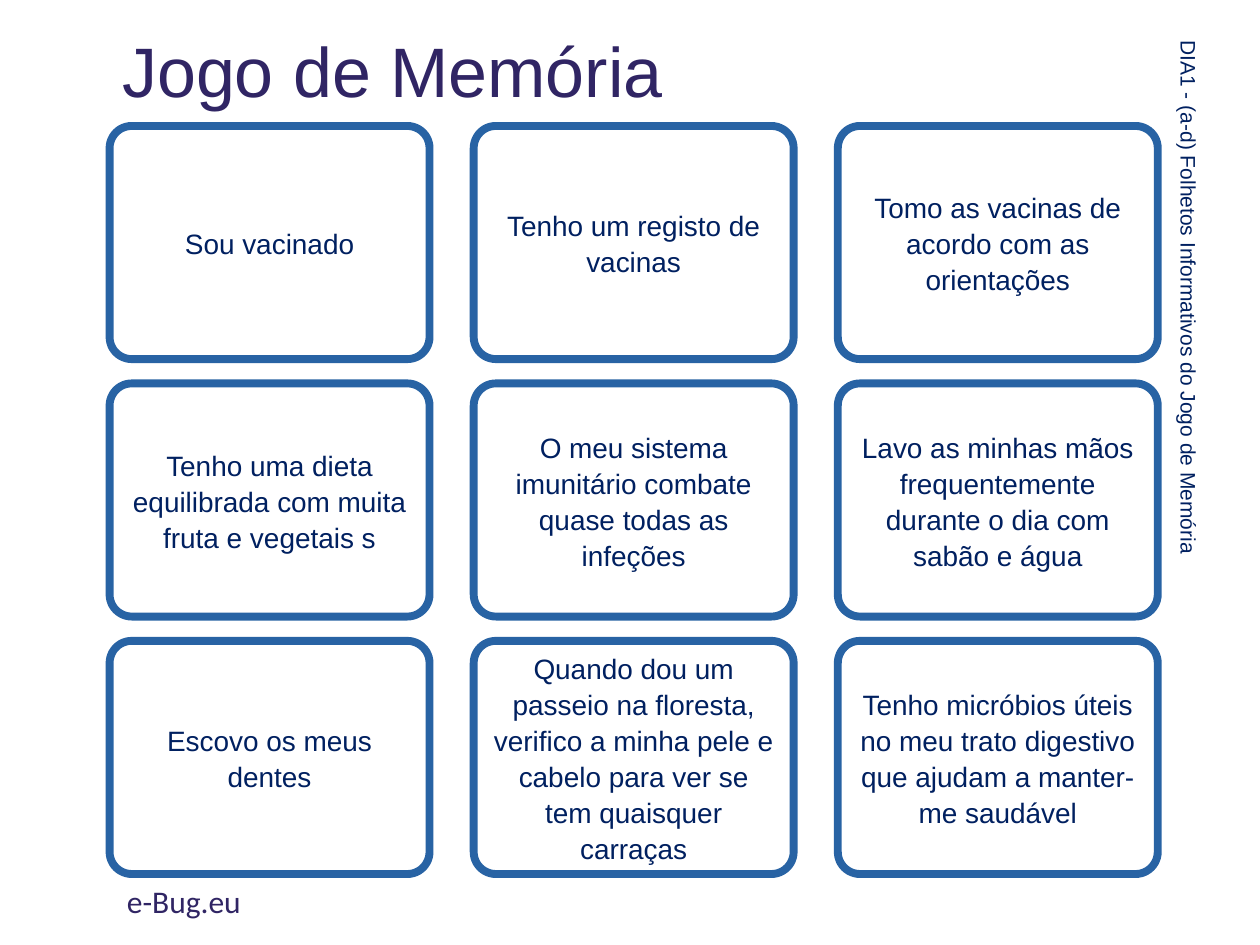
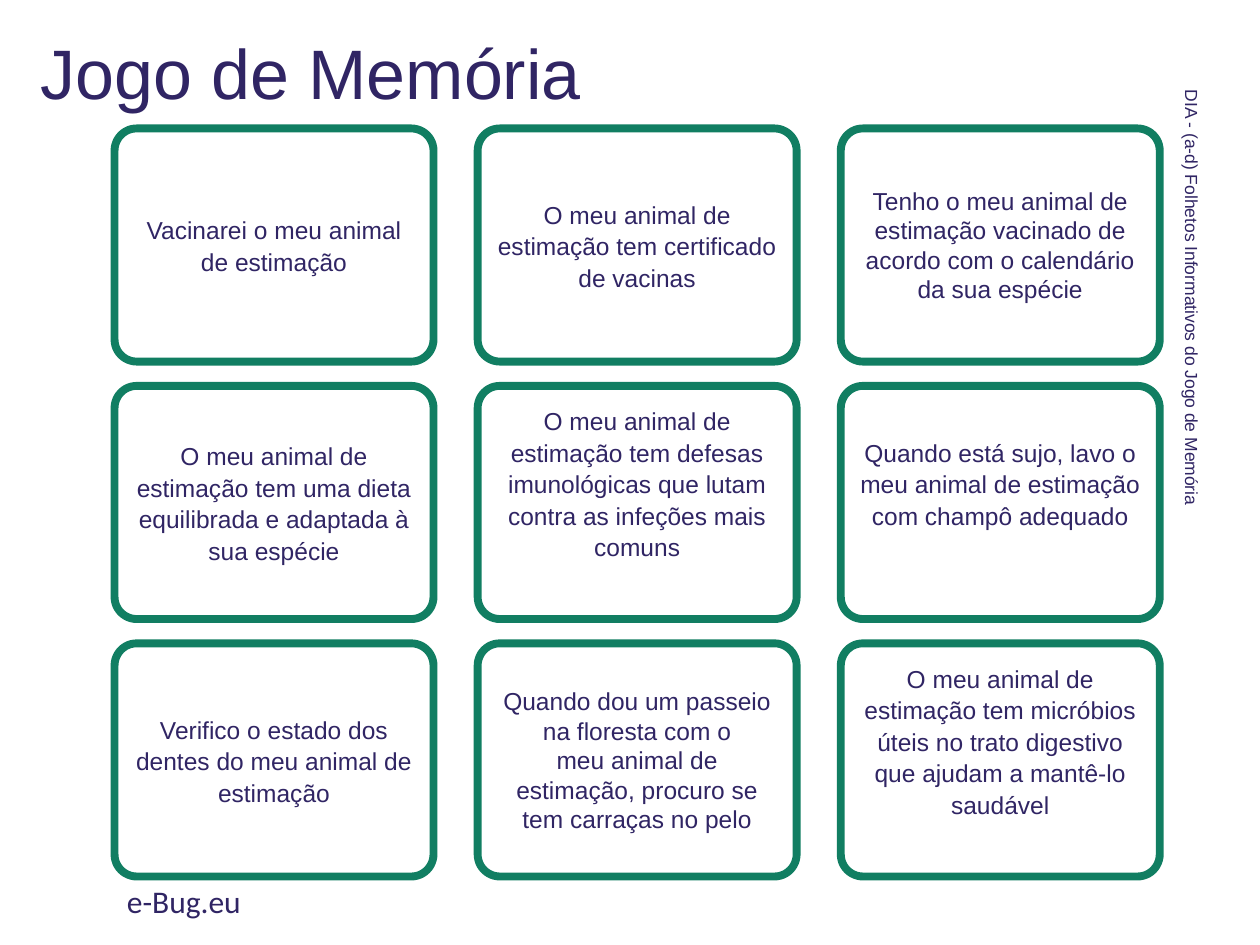
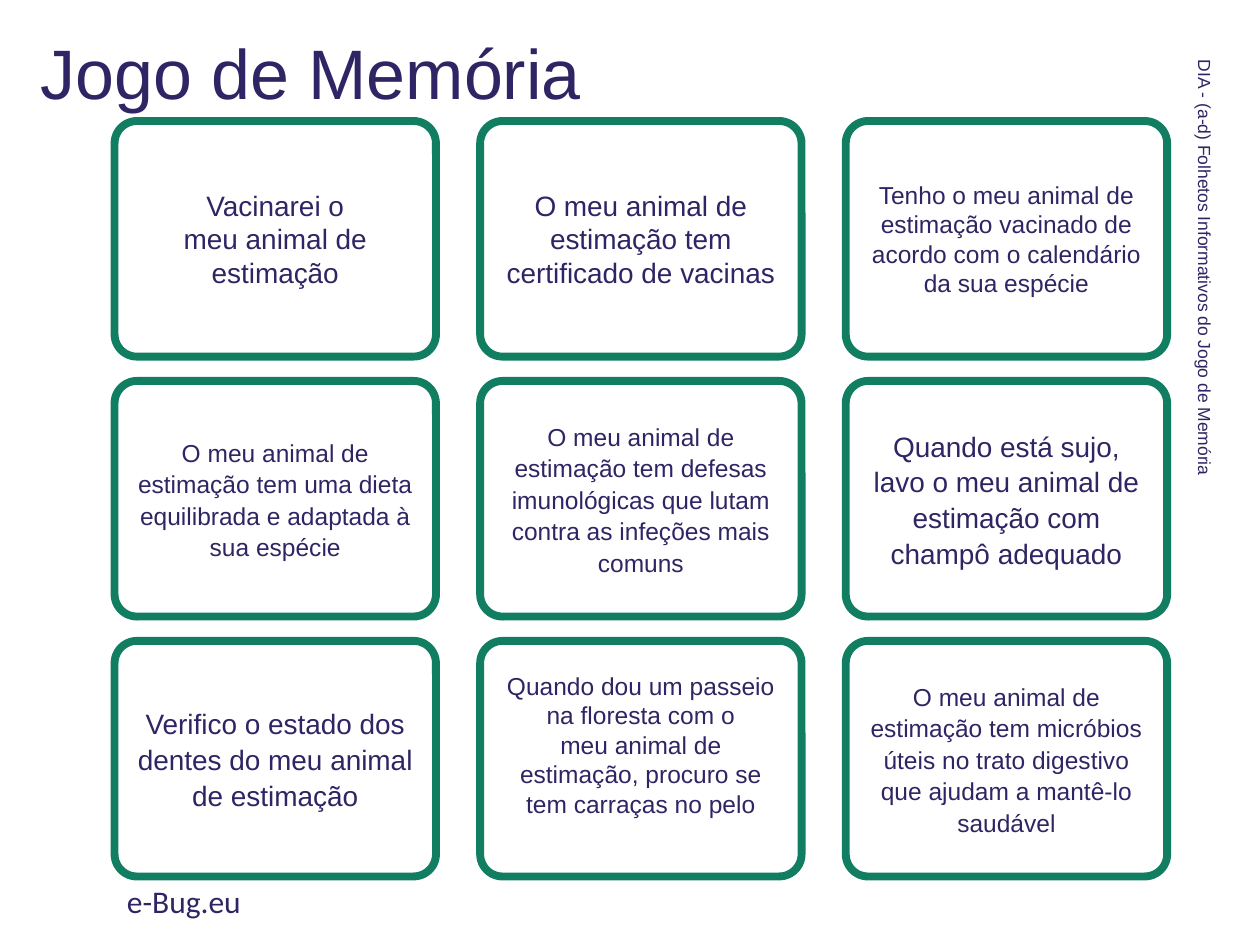
from collections import namedtuple

from pptx import Presentation
from pptx.dml.color import RGBColor
from pptx.enum.shapes import MSO_SHAPE
from pptx.enum.text import MSO_ANCHOR, MSO_AUTO_SIZE, PP_ALIGN
from pptx.util import Cm, Pt

COLORS = {"purple": "302564", "navy": "002060", "blue": "2863A4", "green": "117E62"}
TITLE_ONLY = 5
COLUMNS = 3
GAP_X, GAP_Y = 0.89, 0.49
INSET = 0.13
LIFT_LINE, LIFT_LOOSE_LINE = 0.57, 0.78

# lift is extra room under the text, in cm; tight means single line spacing
Card = namedtuple("Card", "text size tight lift", defaults=(14, False, 0))

PERSON_CARDS = [
    Card(text, 16) for text in (
        "Sou vacinado",
        "Tenho um registo de vacinas",
        "Tomo as vacinas de acordo com as orientações",
        "Tenho uma dieta equilibrada com muita fruta e vegetais s",
        "O meu sistema imunitário combate quase todas as infeções",
        "Lavo as minhas mãos frequentemente durante o dia com sabão e água",
        "Escovo os meus dentes",
        "Quando dou um passeio na floresta, verifico a minha pele e cabelo "
        "para ver se tem quaisquer carraças",
        "Tenho micróbios úteis no meu trato digestivo que ajudam a manter-me saudável",
    )
]

CALENDAR = "Tenho o meu animal de estimação vacinado de acordo com o calendário da sua espécie"
DIET = "O meu animal de estimação tem uma dieta equilibrada e adaptada à sua espécie"
DEFENCES = ("O meu animal de estimação tem defesas imunológicas que lutam "
            "contra as infeções mais comuns")
WASHING = "Quando está sujo, lavo o meu animal de estimação com champô adequado"
TEETH = "Verifico o estado dos dentes do meu animal de estimação"
FOREST = ("Quando dou um passeio\nna floresta com o\n"
          "meu animal de estimação, procuro se tem carraças no pelo")
MICROBES = ("O meu animal de estimação tem micróbios úteis no trato digestivo "
            "que ajudam a mantê-lo saudável")

PET_CARDS = [
    Card("Vacinarei o meu animal de estimação"),
    Card("O meu animal de estimação tem certificado de vacinas"),
    Card(CALENDAR, tight=True),
    Card(DIET),
    Card(DEFENCES, lift=LIFT_LOOSE_LINE),
    Card(WASHING, lift=LIFT_LOOSE_LINE),
    Card(TEETH),
    Card(FOREST, tight=True),
    Card(MICROBES, lift=LIFT_LOOSE_LINE),
]

PET_CARDS_LARGE = [
    Card("Vacinarei o\nmeu animal de estimação", 16, tight=True),
    Card("O meu animal de estimação tem\ncertificado de vacinas", 16, tight=True),
    Card(CALENDAR, tight=True),
    Card(DIET),
    Card(DEFENCES),
    Card(WASHING, 16),
    Card(TEETH, 16),
    Card(FOREST, tight=True, lift=LIFT_LINE),
    Card(MICROBES),
]

PET_SIDE_NOTE = "DIA - (a-d) Folhetos Informativos do Jogo de Memória"

# Boxes are left, top, width, height in cm; "first_card" sets the whole grid
GAMES = [
    dict(cards=PERSON_CARDS, outline="blue", ink="navy",
         title=(2.21, 0.33, 22.86, 2.34), first_card=(2.21, 2.54, 6.45, 4.7),
         note="DIA1 - (a-d) Folhetos Informativos do Jogo de Memória",
         note_size=12, note_box=(18.49, 5.66, 10.95, 0.76)),
    dict(cards=PET_CARDS, outline="green", ink="purple",
         title=(0.56, 0, 22.86, 3.1), first_card=(2.31, 2.59, 6.43, 4.7),
         note=PET_SIDE_NOTE, note_size=10, note_box=(19.53, 5.71, 8.99, 0.69)),
    dict(cards=PET_CARDS_LARGE, outline="green", ink="purple",
         title=(0.56, 0, 22.86, 3.1), first_card=(2.31, 2.44, 6.48, 4.75),
         note=PET_SIDE_NOTE, note_size=10, note_box=(19.79, 5.11, 8.99, 0.69)),
]


def style(paragraph, size, color, name="Arial"):
    paragraph.font.name = name
    paragraph.font.size = Pt(size)
    paragraph.font.color.rgb = RGBColor.from_string(COLORS[color])


def add_label(slide, box, text, size, color, name="Arial"):
    label = slide.shapes.add_textbox(*map(Cm, box))
    label.text_frame.text = text
    style(label.text_frame.paragraphs[0], size, color, name)
    return label


prs = Presentation()
prs.slide_width, prs.slide_height = Cm(25.4), Cm(19.05)

for game in GAMES:
    slide = prs.slides.add_slide(prs.slide_layouts[TITLE_ONLY])

    title = slide.shapes.title
    title.left, title.top, title.width, title.height = map(Cm, game["title"])
    heading = title.text_frame
    heading.text = "Jogo de Memória"
    heading.auto_size = MSO_AUTO_SIZE.NONE
    heading.vertical_anchor = MSO_ANCHOR.MIDDLE
    heading.paragraphs[0].alignment = PP_ALIGN.LEFT
    heading.paragraphs[0].line_spacing = 0.9
    style(heading.paragraphs[0], 40, "purple")

    left, top, width, height = game["first_card"]
    for index, card in enumerate(game["cards"]):
        row, column = divmod(index, COLUMNS)
        frame = slide.shapes.add_shape(
            MSO_SHAPE.ROUNDED_RECTANGLE,
            Cm(left + column * (width + GAP_X)), Cm(top + row * (height + GAP_Y)),
            Cm(width), Cm(height))
        frame.adjustments[0] = 0.095
        frame.shadow.inherit = False
        frame.fill.background()
        frame.line.color.rgb = RGBColor.from_string(COLORS[game["outline"]])
        frame.line.width = Pt(4.5)

        message = frame.text_frame
        message.text = card.text
        message.word_wrap = True
        message.vertical_anchor = MSO_ANCHOR.MIDDLE
        message.margin_bottom = Cm(INSET + card.lift)
        for paragraph in message.paragraphs:
            paragraph.alignment = PP_ALIGN.CENTER
            if not card.tight:
                paragraph.line_spacing = 1.07
                paragraph.space_after = Pt(8)
            style(paragraph, card.size, game["ink"])

    side_note = add_label(slide, game["note_box"], game["note"],
                          game["note_size"], game["ink"])
    side_note.rotation = 90
    side_note.text_frame.word_wrap = False
    side_note.text_frame.auto_size = MSO_AUTO_SIZE.SHAPE_TO_FIT_TEXT

    site = add_label(slide, (2.31, 17.65, 8.59, 1.02), "e-Bug.eu", 18, "purple", "Calibri")
    site.text_frame.word_wrap = True

prs.save("out.pptx")
